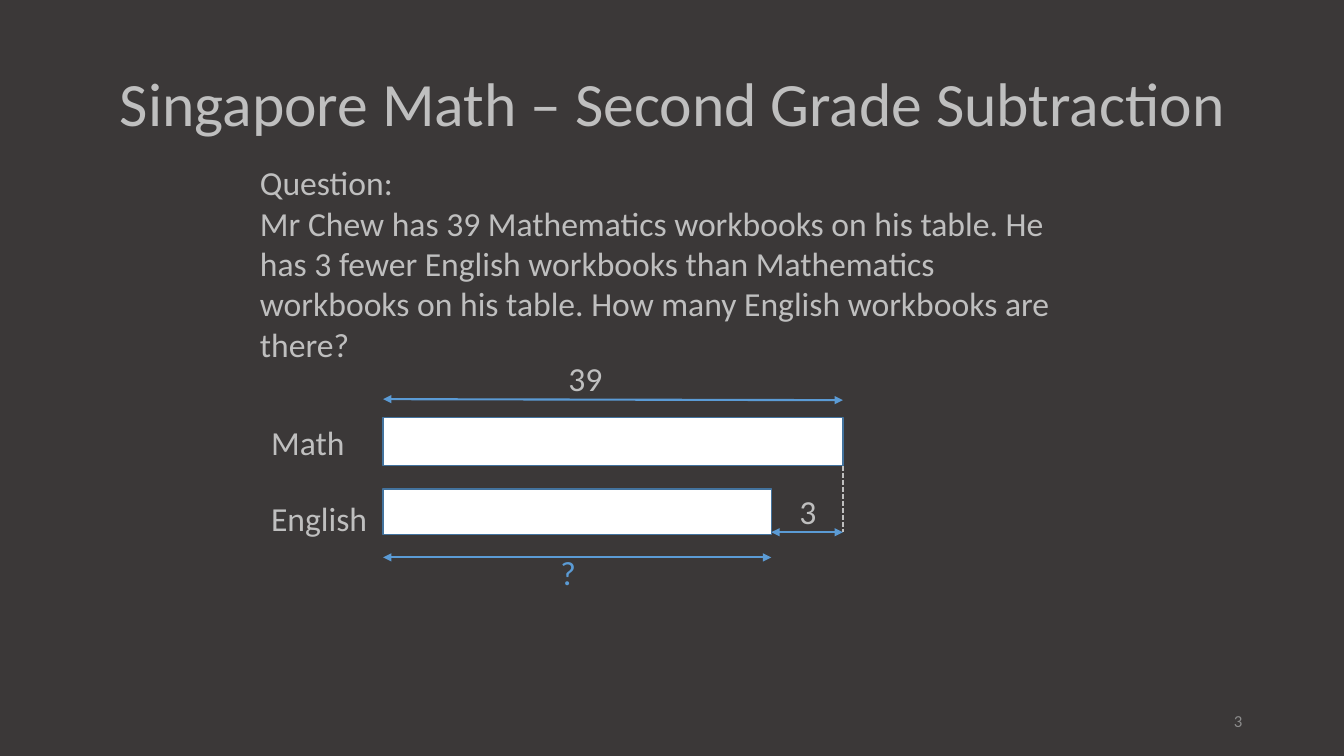
import pptx
import pptx.dml.color
import pptx.enum.dml
import pptx.enum.shapes
import pptx.enum.text
import pptx.oxml.ns
import pptx.util
from lxml import etree

BACKGROUND = pptx.dml.color.RGBColor(0x3B, 0x38, 0x38)
LIGHT_GREY = pptx.dml.color.RGBColor(0xBF, 0xBF, 0xBF)
MID_GREY = pptx.dml.color.RGBColor(0x8C, 0x8C, 0x8C)
BLUE = pptx.dml.color.RGBColor(0x5B, 0x9B, 0xD5)
DARK_BLUE = pptx.dml.color.RGBColor(0x43, 0x73, 0x9E)
WHITE = pptx.dml.color.RGBColor(0xFF, 0xFF, 0xFF)

ALIGN = pptx.enum.text.PP_ALIGN
ANCHOR = pptx.enum.text.MSO_ANCHOR

deck = pptx.Presentation()
deck.slide_width = pptx.util.Inches(13.33)
deck.slide_height = pptx.util.Inches(7.5)
page = deck.slides.add_slide(deck.slide_layouts[6])
page.background.fill.solid()
page.background.fill.fore_color.rgb = BACKGROUND

COLUMN = deck.slide_width / 133.3
ROW = deck.slide_height / 75


def on_grid(left, top, right, bottom):
    return [round(left * COLUMN), round(top * ROW), round(right * COLUMN), round(bottom * ROW)]


def add_text(lines, area, size=24, color=LIGHT_GREY, align=ALIGN.LEFT, anchor=ANCHOR.TOP, spacing=1.0):
    box = page.shapes.add_textbox(*on_grid(*area))
    for name, value in {"word_wrap": True, "vertical_anchor": anchor}.items():
        setattr(box.text_frame, name, value)
    for index, line in enumerate(lines):
        para = box.text_frame.add_paragraph() if index else box.text_frame.paragraphs[0]
        for name, value in {"alignment": align, "line_spacing": spacing}.items():
            setattr(para, name, value)
        span = para.add_run()
        span.text = line
        for name, value in {"name": "Calibri", "size": pptx.util.Pt(size)}.items():
            setattr(span.font, name, value)
        span.font.color.rgb = color


BAR_LEFT = 38
MATH_RIGHT = 83.6
ENGLISH_RIGHT = 76.5
MATH_TOP, MATH_HEIGHT = 41.4, 4.8
ENGLISH_TOP, ENGLISH_HEIGHT = 48.5, 4.5
DIFFERENCE_ROW = 52.8

add_text(["Singapore Math – Second Grade Subtraction"], (5.7, 5.5, 122.1, 10.1),
         size=44, align=ALIGN.CENTER, anchor=ANCHOR.MIDDLE, spacing=0.9)
add_text([
    "Question:",
    "Mr Chew has 39 Mathematics workbooks on his table. He has 3 fewer English workbooks "
    "than Mathematics workbooks on his table. How many English workbooks are there?",
], (24.8, 15.6, 80.8, 21.2))

for label, left, top, width, color in [
    ("39", 55.4, 35, 6.4, LIGHT_GREY),
    ("3", 78.3, 48.2, 4.6, LIGHT_GREY),
    ("?", 54.6, 54.3, 4.6, BLUE),
    ("Math", 25.9, 41.4, 12.1, LIGHT_GREY),
    ("English", 25.9, 48.9, 12.1, LIGHT_GREY),
]:
    add_text([label], (left, top, width, 5), color=color)

for start, start_row, end, end_row, color, weight, is_arrow in [
    (ENGLISH_RIGHT, DIFFERENCE_ROW, MATH_RIGHT, DIFFERENCE_ROW, BLUE, 1.5, True),
    (BAR_LEFT, 55.3, ENGLISH_RIGHT, 55.3, BLUE, 1.5, True),
    (BAR_LEFT, 39.6, MATH_RIGHT, 39.7, BLUE, 1.5, True),
    (MATH_RIGHT, MATH_TOP + MATH_HEIGHT, MATH_RIGHT, DIFFERENCE_ROW, LIGHT_GREY, 1.25, False),
]:
    connector = page.shapes.add_connector(
        pptx.enum.shapes.MSO_CONNECTOR.STRAIGHT, *on_grid(start, start_row, end, end_row))
    connector.line.color.rgb = color
    connector.line.width = pptx.util.Pt(weight)
    if is_arrow:
        outline = connector.line._get_or_add_ln()
        for tip in ("a:headEnd", "a:tailEnd"):
            etree.SubElement(outline, pptx.oxml.ns.qn(tip), type="triangle")
    else:
        connector.line.dash_style = pptx.enum.dml.MSO_LINE.SQUARE_DOT
    etree.SubElement(connector._element.spPr, pptx.oxml.ns.qn("a:effectLst"))

for top, right, height in [
    (MATH_TOP, MATH_RIGHT, MATH_HEIGHT),
    (ENGLISH_TOP, ENGLISH_RIGHT, ENGLISH_HEIGHT),
]:
    bar = page.shapes.add_shape(
        pptx.enum.shapes.MSO_SHAPE.RECTANGLE, *on_grid(BAR_LEFT, top, right - BAR_LEFT, height))
    bar.shadow.inherit = False
    bar.fill.solid()
    bar.fill.fore_color.rgb = WHITE
    bar.line.color.rgb = DARK_BLUE
    bar.line.width = pptx.util.Pt(1)

add_text(["3"], (94.2, 69.5, 30, 4), size=12, color=MID_GREY, align=ALIGN.RIGHT, anchor=ANCHOR.MIDDLE)

deck.save("out.pptx")
